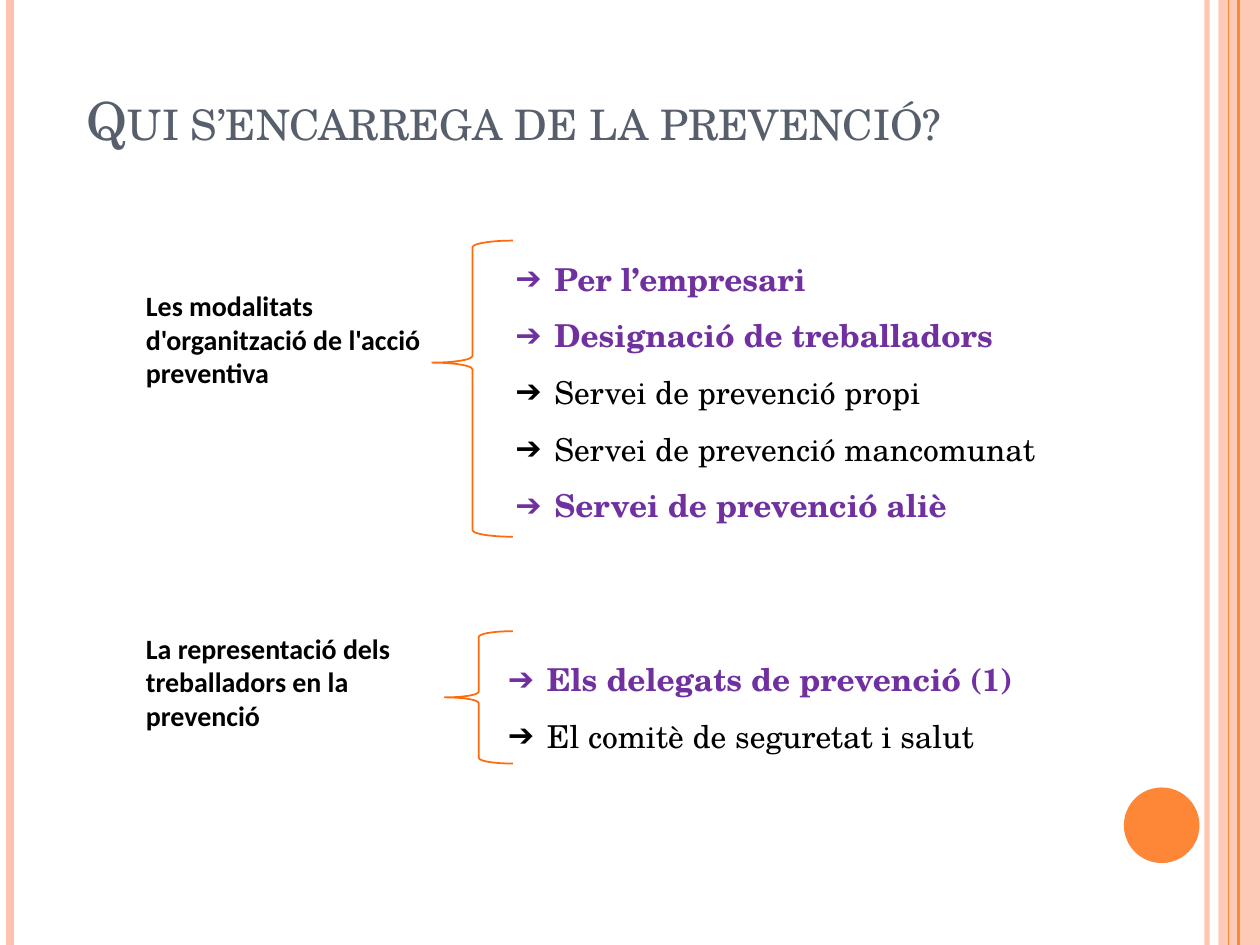
"""Build a slide on who is in charge of occupational risk prevention."""
from dataclasses import dataclass

from lxml.etree import SubElement
from pptx import Presentation
from pptx.dml.color import RGBColor
from pptx.enum.shapes import MSO_CONNECTOR, MSO_SHAPE
from pptx.enum.text import MSO_ANCHOR, MSO_AUTO_SIZE, PP_ALIGN
from pptx.oxml.ns import qn
from pptx.util import Inches, Pt


@dataclass(frozen=True)
class Theme:
    serif: str = "TeX Gyre Schola"
    sans: str = "Calibri"
    title_size: int = 30
    list_size: int = 18
    label_size: int = 16
    heading: RGBColor = RGBColor(0x57, 0x5F, 0x6D)
    text: RGBColor = RGBColor(0, 0, 0)
    highlight: RGBColor = RGBColor(0x70, 0x30, 0xA0)
    orange: RGBColor = RGBColor(0xFE, 0x86, 0x37)
    pale: RGBColor = RGBColor(0xFE, 0xC3, 0xAE)
    brace: RGBColor = RGBColor(0xFF, 0x6B, 0x0A)


THEME = Theme()
STRIPES = [
    (9.58, THEME.pale, 3, 93),
    (0.08, THEME.pale, 4.5, 100),
    (9.83, THEME.orange, 1.5, 100),
    (9.75, THEME.orange, 0.75, 100),
]
MODALITIES = [
    ("Per l’empresari", True),
    ("Designació de treballadors", True),
    ("Servei de prevenció propi", False),
    ("Servei de prevenció mancomunat", False),
    ("Servei de prevenció aliè", True),
]
REPRESENTATION = [
    ("Els delegats de prevenció (1)", True),
    ("El comitè de seguretat i salut", False),
]


def place(shape, box):
    shape.left, shape.top, shape.width, shape.height = map(Inches, box)


def style(font, face, size, color, bold=False):
    font.name, font.size, font.bold = face, Pt(size), bold
    font.color.rgb = color


def set_opacity(shape, percent):
    for color in shape.element.spPr.iter(qn("a:srgbClr")):
        SubElement(color, qn("a:alpha"), val=str(percent * 1000))


def add_stripe(slide, x, color, width, opacity):
    stripe = slide.shapes.add_connector(
        MSO_CONNECTOR.STRAIGHT, Inches(x), 0, Inches(x), Inches(7.5))
    stripe.line.color.rgb = color
    stripe.line.width = Pt(width)
    if opacity < 100:
        set_opacity(stripe, opacity)
    SubElement(stripe.element.spPr, qn("a:effectLst"))


def add_filled(slide, kind, box, color):
    filled = slide.shapes.add_shape(kind, *map(Inches, box))
    filled.shadow.inherit = False
    filled.fill.solid()
    filled.fill.fore_color.rgb = color
    filled.line.fill.background()
    return filled


def add_brace(slide, box, point=0.5):
    brace = slide.shapes.add_shape(MSO_SHAPE.LEFT_BRACE, *map(Inches, box))
    brace.shadow.inherit = False
    brace.fill.background()
    brace.line.color.rgb = THEME.brace
    brace.line.width = Pt(1)
    brace.adjustments[0], brace.adjustments[1] = 0.083, point


def add_label(slide, box, text):
    frame = slide.shapes.add_textbox(*map(Inches, box)).text_frame
    frame.word_wrap = True
    frame.text = text
    style(frame.paragraphs[0].font, THEME.sans, THEME.label_size, THEME.text, True)


def fill_title(title, box, text):
    place(title, box)
    frame = title.text_frame
    frame.text = text
    frame.vertical_anchor = MSO_ANCHOR.BOTTOM
    frame.auto_size = MSO_AUTO_SIZE.NONE
    heading = frame.paragraphs[0]
    heading.alignment = PP_ALIGN.LEFT
    style(heading.font, THEME.serif, THEME.title_size, THEME.heading)
    heading.runs[0].font._element.set("cap", "small")


def fill_list(body, box, items):
    """Fill a body placeholder with arrow-bulleted (text, highlighted) items."""
    place(body, box)
    frame = body.text_frame
    frame.text = "\n".join(text for text, _ in items)
    frame.auto_size = MSO_AUTO_SIZE.NONE
    for item, (_, highlighted) in zip(frame.paragraphs, items):
        item.line_spacing = 1.5
        item.space_before = Pt(0)
        properties = item._p.get_or_add_pPr()
        properties.set("marL", str(Inches(0.31)))
        properties.set("indent", str(-Inches(0.31)))
        SubElement(properties, qn("a:buChar"), char="➔")
        color = THEME.highlight if highlighted else THEME.text
        style(item.font, THEME.serif, THEME.list_size, color, highlighted)


def add_decoration(slide):
    band = add_filled(slide, MSO_SHAPE.RECTANGLE, (9.67, 0, 0.33, 7.5), THEME.pale)
    set_opacity(band, 87)
    for stripe in STRIPES:
        add_stripe(slide, *stripe)
    add_filled(slide, MSO_SHAPE.OVAL, (8.92, 6.25, 0.6, 0.6), THEME.orange)


def main():
    deck = Presentation()
    deck.slide_width, deck.slide_height = Inches(10), Inches(7.5)
    slide = deck.slides.add_slide(deck.slide_layouts.get_by_name("Two Content"))
    title, modalities, representation = slide.placeholders

    add_decoration(slide)
    fill_title(title, (0.59, 0, 8.17, 1.25), "Qui s’encarrega de la prevenció?")

    add_label(slide, (1.06, 2.24, 2.48, 1.22),
              "Les modalitats d'organització de l'acció preventiva")
    add_brace(slide, (3.43, 1.91, 0.64, 2.35), point=0.412)
    fill_list(modalities, (3.99, 1.86, 4.87, 2.52), MODALITIES)

    add_label(slide, (1.06, 4.96, 2.48, 1.22),
              "La representació dels treballadors en la prevenció")
    add_brace(slide, (3.53, 5.01, 0.54, 1.05))
    fill_list(representation, (3.93, 5.04, 4.93, 1.09), REPRESENTATION)

    deck.save("out.pptx")


if __name__ == "__main__":
    main()
